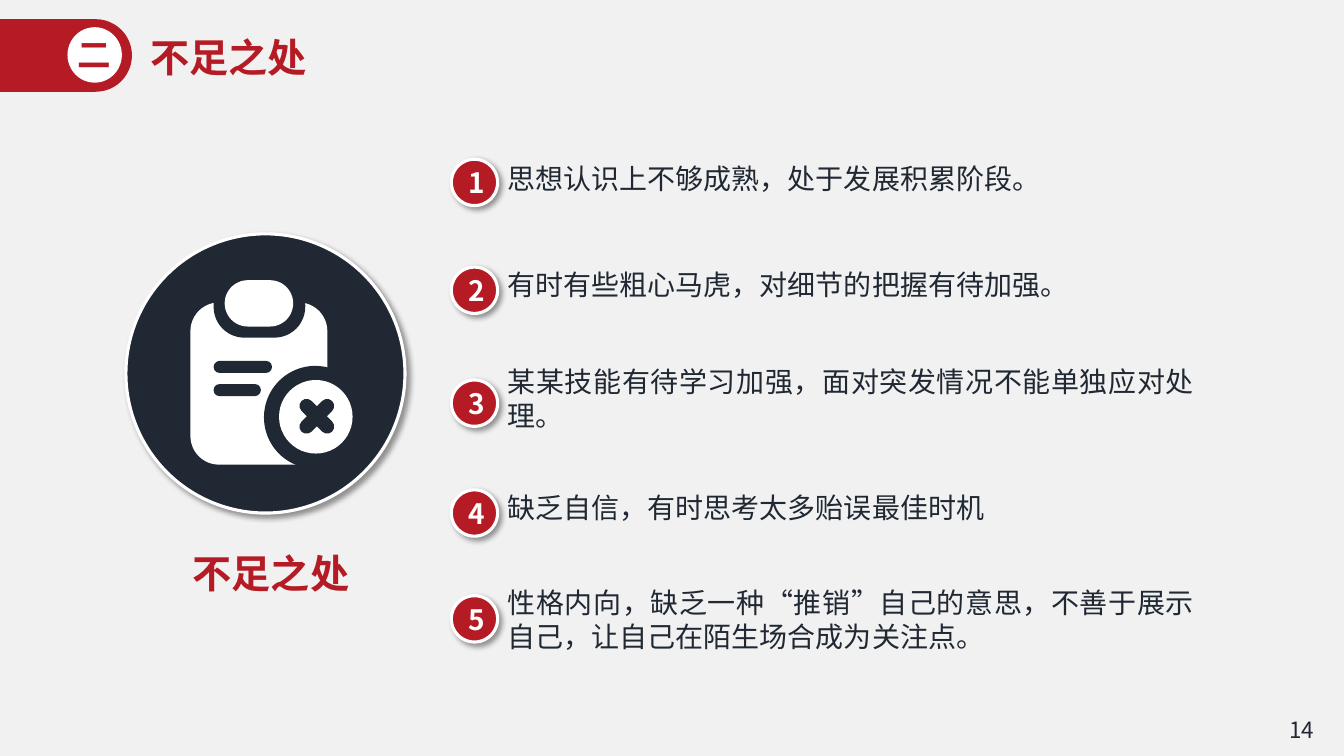
"""Build the shortcomings slide: section title, clipboard emblem and five numbered points."""
from lxml.etree import SubElement
from pptx import Presentation
from pptx.dml.color import RGBColor
from pptx.enum.shapes import MSO_SHAPE as Preset
from pptx.enum.text import MSO_ANCHOR as Anchor, MSO_AUTO_SIZE as AutoSize, PP_ALIGN as Align
from pptx.oxml import parse_xml
from pptx.oxml.ns import nsdecls, qn
from pptx.util import Inches, Pt

RED = RGBColor(0xB5, 0x1B, 0x25)
NAVY = RGBColor(0x20, 0x28, 0x33)
WHITE = RGBColor(0xFF, 0xFF, 0xFF)
PALE = RGBColor(0xF1, 0xF1, 0xF1)
FONT = "Noto Sans CJK SC"

HEADING = "不足之处"
SECTION = "二"
PAGE = "14"
POINTS = [
    ("思想认识上不够成熟，处于发展积累阶段。", 1.58, 1.55),
    ("有时有些粗心马虎，对细节的把握有待加强。", 2.65, 2.6),
    ("某某技能有待学习加强，面对突发情况不能单独应对处理。", 3.77, 3.57),
    ("缺乏自信，有时思考太多贻误最佳时机", 4.86, 4.82),
    ("性格内向，缺乏一种“推销”自己的意思，不善于展示自己，让自己在陌生场合成为关注点。", 5.91, 5.76),
]
BADGE_LEFT, BADGE_SIZE = 4.48, 0.46
POINT_WIDTH, LINE_HEIGHT = 7.01, 0.44

CLIPBOARD = [
    ((1.89, 3.0, 1.36, 1.61), 0.21, WHITE, 0),
    ((2.12, 2.67, 0.91, 0.68), 0.45, NAVY, 0),
    ((2.23, 2.78, 0.68, 0.46), 0.5, WHITE, 0),
    ((2.12, 3.58, 0.58, 0.12), 0.5, NAVY, 0),
    ((2.12, 3.81, 0.47, 0.12), 0.5, NAVY, 0),
    ((2.62, 3.63, 1.02, 1.02), 0.5, NAVY, 0),
    ((2.77, 3.77, 0.73, 0.73), 0.5, WHITE, 0),
    ((2.93, 4.06, 0.43, 0.14), 0.5, NAVY, 45),
    ((2.93, 4.06, 0.43, 0.14), 0.5, NAVY, -45),
]


def add_run(paragraph, text, size, color, bold=False):
    run = paragraph.add_run()
    run.text = text
    run.font.size, run.font.bold, run.font.name = Pt(size), bold, FONT
    run.font.color.rgb = color
    SubElement(run.font._element, qn("a:ea")).set("typeface", FONT)


def write(shape, text, size, color, bold=False, align=Align.LEFT):
    paragraph = shape.text_frame.paragraphs[0]
    paragraph.alignment = align
    add_run(paragraph, text, size, color, bold)


def add_text(slide, box, text, size, color, bold=False, align=Align.LEFT, wrap=True):
    shape = slide.shapes.add_textbox(*map(Inches, box))
    shape.text_frame.word_wrap = wrap
    write(shape, text, size, color, bold, align)


def add_preset(slide, preset, box, fill):
    shape = slide.shapes.add_shape(preset, *map(Inches, box))
    shape.shadow.inherit = False
    shape.fill.solid()
    shape.fill.fore_color.rgb = fill
    shape.line.fill.background()
    return shape


def add_raised_circle(slide, box, fill):
    circle = add_preset(slide, Preset.OVAL, box, fill)
    circle.line.color.rgb = WHITE
    circle.line.width = Pt(2.25)
    circle._element.spPr.find(qn("a:effectLst")).append(parse_xml(
        f'<a:outerShdw {nsdecls("a")} blurRad="{Pt(4)}" dist="{Pt(3)}" dir="2700000" '
        'algn="tl" rotWithShape="0"><a:srgbClr val="000000"><a:alpha val="40000"/>'
        '</a:srgbClr></a:outerShdw>'))
    return circle


def add_title(slide):
    title = slide.shapes.title
    title.left, title.top, title.width, title.height = map(Inches, (1.39, 0.28, 3.78, 0.57))
    title.text_frame.auto_size = AutoSize.NONE
    title.text_frame.vertical_anchor = Anchor.TOP
    write(title, HEADING, 28, RED, True)


def add_section_tab(slide):
    tab = add_preset(slide, Preset.ROUND_2_SAME_RECTANGLE, (0.29, -0.11, 0.72, 1.32), RED)
    tab.adjustments[0] = 0.5
    tab.rotation = 90
    add_preset(slide, Preset.OVAL, (0.67, 0.27, 0.54, 0.55), WHITE)
    add_text(slide, (0.67, 0.29, 0.54, 0.5), SECTION, 24, RED, True, wrap=False)


def add_emblem(slide):
    add_raised_circle(slide, (1.25, 2.32, 2.77, 2.77), NAVY)
    for box, rounding, fill, rotation in CLIPBOARD:
        part = add_preset(slide, Preset.ROUNDED_RECTANGLE, box, fill)
        part.adjustments[0] = rounding
        part.rotation = rotation
    add_text(slide, (1.47, 5.4, 2.44, 0.57), HEADING, 28, RED, True, Align.CENTER)


def add_points(slide):
    for number, (text, badge_top, text_top) in enumerate(POINTS, 1):
        badge = add_raised_circle(slide, (BADGE_LEFT, badge_top, BADGE_SIZE, BADGE_SIZE), RED)
        write(badge, str(number), 20, WHITE, True, Align.CENTER)
        box = (BADGE_LEFT + BADGE_SIZE, text_top, POINT_WIDTH, LINE_HEIGHT)
        add_text(slide, box, text, 20, NAVY, align=Align.JUSTIFY)


presentation = Presentation()
presentation.slide_width, presentation.slide_height = Inches(13.34), Inches(7.5)
slide = presentation.slides.add_slide(presentation.slide_layouts[5])
slide.background.fill.solid()
slide.background.fill.fore_color.rgb = PALE
add_title(slide)
add_section_tab(slide)
add_emblem(slide)
add_points(slide)
add_text(slide, (12.67, 7.06, 0.5, 0.37), PAGE, 16, NAVY, align=Align.CENTER, wrap=False)
presentation.save("out.pptx")
